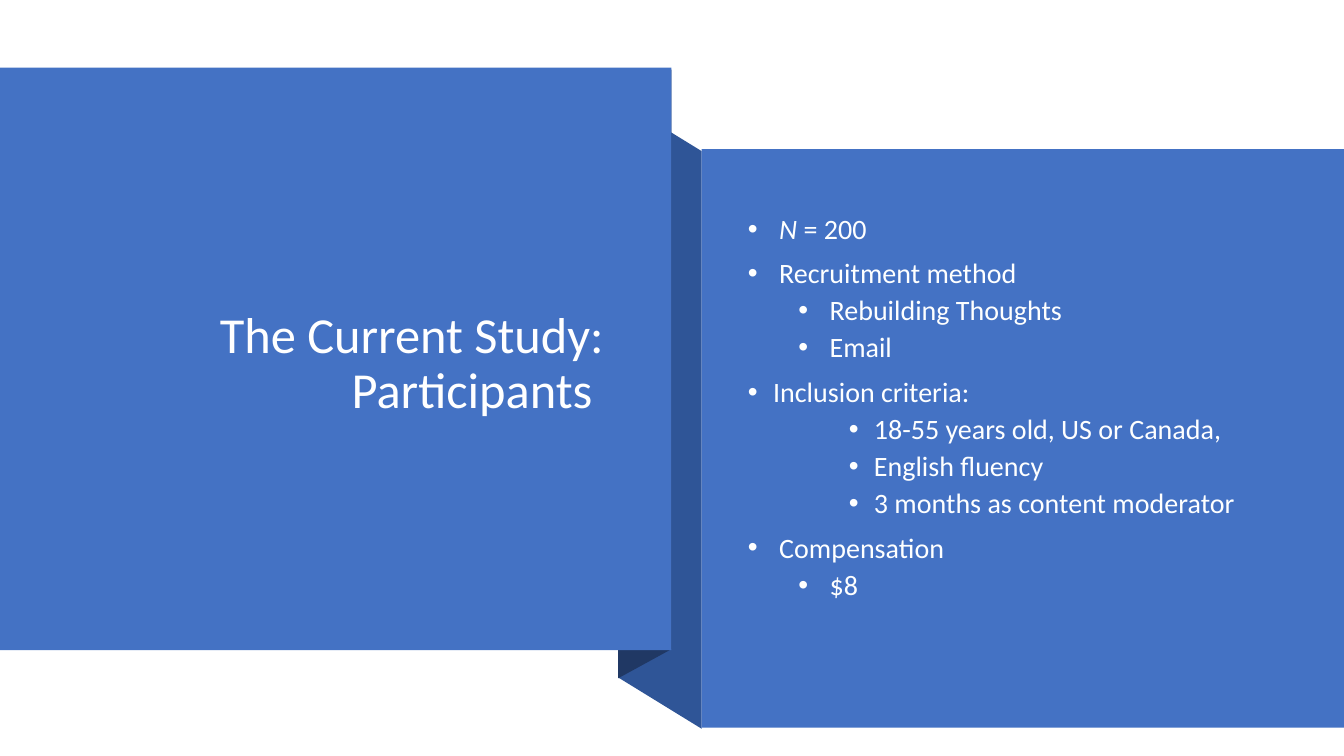
import pptx
import pptx.dml.color
import pptx.enum.text
import pptx.oxml
import pptx.util
import pptx.enum.shapes
import pptx.oxml.ns
import lxml.etree

Inches = pptx.util.Inches
Pt = pptx.util.Pt

BLUE = "4472C4"
SIDE = "2F5597"
DARK = "203864"
WHITE = "FFFFFF"
PALE = "FEFFFF"


def color(code):
    return pptx.dml.color.RGBColor.from_string(code)


class Deck:
    font = "Calibri"

    def __init__(self, width, height):
        self.file = pptx.Presentation()
        self.file.slide_width = Inches(width)
        self.file.slide_height = Inches(height)
        self.slide = self.file.slides.add_slide(self.file.slide_layouts[5])

    def paint(self, shape, fill):
        shape.shadow.inherit = False
        shape.fill.solid()
        shape.fill.fore_color.rgb = color(fill)
        shape.line.fill.background()

    def panel(self, left, top, width, height, fill):
        kind = pptx.enum.shapes.MSO_SHAPE.RECTANGLE
        box = [Inches(n) for n in (left, top, width, height)]
        self.paint(self.slide.shapes.add_shape(kind, *box), fill)

    def fold(self, points, fill):
        spots = [(Inches(x), Inches(y)) for x, y in points]
        build = self.slide.shapes.build_freeform(*spots[0])
        build.add_line_segments(spots[1:], close=True)
        self.paint(build.convert_to_shape(), fill)

    def frame(self, shape):
        frame = shape.text_frame
        frame.word_wrap = True
        frame.auto_size = pptx.enum.text.MSO_AUTO_SIZE.NONE
        frame.vertical_anchor = pptx.enum.text.MSO_ANCHOR.MIDDLE
        return frame

    def style(self, run, size, code):
        run.font.name = self.font
        run.font.size = Pt(size)
        run.font.color.rgb = color(code)

    def title(self, left, top, width, height, text):
        shape = self.slide.shapes.title
        shape.left, shape.top = Inches(left), Inches(top)
        shape.width, shape.height = Inches(width), Inches(height)
        frame = self.frame(shape)
        frame.text = text
        para = frame.paragraphs[0]
        para.alignment = pptx.enum.text.PP_ALIGN.RIGHT
        para.line_spacing = 0.9
        self.style(para.runs[0], 36, WHITE)
        tree = shape.element.getparent()
        tree.append(shape.element)

    def bullet(self, para, left, hang):
        props = para._p.get_or_add_pPr()
        props.set("marL", str(Inches(left)))
        props.set("indent", str(-Inches(hang)))
        tag = pptx.oxml.ns.qn
        lxml.etree.SubElement(props, tag("a:buFont")).set("typeface", "Arial")
        lxml.etree.SubElement(props, tag("a:buChar")).set("char", "•")

    def bullets(self, left, top, width, height, items):
        box = [Inches(n) for n in (left, top, width, height)]
        frame = self.frame(self.slide.shapes.add_textbox(*box))
        for i, (level, hang, parts) in enumerate(items):
            para = frame.add_paragraph() if i else frame.paragraphs[0]
            para.level = level
            para.line_spacing = 0.9
            para.space_before = Pt(5 if level else 10)
            self.bullet(para, level * 0.5 + hang, hang)
            for text, slant in parts:
                run = para.add_run()
                run.text = text
                self.style(run, 20, PALE)
                run.font.italic = slant

    def save(self):
        self.file.save("out.pptx")


def main():
    deck = Deck(13.33, 7.5)
    deck.fold([(6.96, 7.23), (6.13, 6.72), (6.13, 0.99), (6.96, 1.5)], SIDE)
    deck.fold([(6.66, 6.44), (6.13, 6.73), (6.13, 0.98), (6.66, 0.69)], DARK)
    deck.panel(0, 0.67, 6.66, 5.78, BLUE)
    deck.panel(6.96, 1.48, 6.37, 5.74, BLUE)
    deck.title(0.95, 1.32, 5.14, 4.6, "The Current Study: Participants ")
    wide, slim = 0.31, 0.25
    items = [
        (0, wide, [("N", True), (" = 200", False)]),
        (0, wide, [("Recruitment method", False)]),
        (1, wide, [("Rebuilding Thoughts", False)]),
        (1, wide, [("Email", False)]),
        (0, slim, [("Inclusion criteria:", False)]),
        (2, slim, [("18-55 years old, US or Canada,", False)]),
        (2, slim, [("English fluency", False)]),
        (2, slim, [("3 months as content moderator", False)]),
        (0, wide, [("Compensation", False)]),
        (1, wide, [("$8", False)]),
    ]
    deck.bullets(7.32, 1.85, 5.14, 4.4, items)
    deck.save()


if __name__ == "__main__":
    main()
